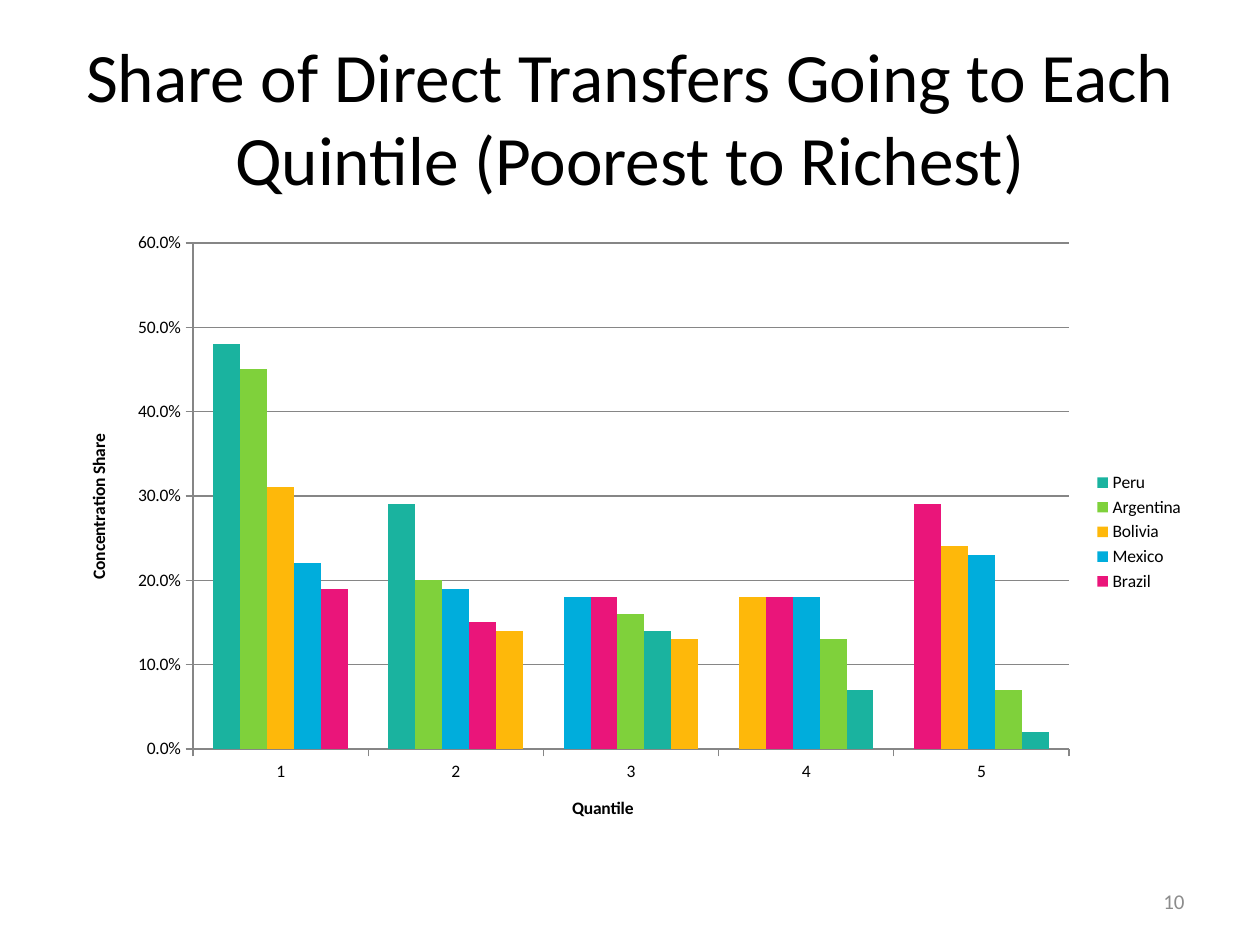
from dataclasses import dataclass

from lxml.etree import SubElement
from pptx import Presentation
from pptx.chart.data import CategoryChartData
from pptx.dml.color import RGBColor
from pptx.enum.chart import XL_CHART_TYPE, XL_LEGEND_POSITION, XL_TICK_MARK
from pptx.enum.text import MSO_ANCHOR, PP_ALIGN
from pptx.oxml.ns import qn
from pptx.util import Emu, Pt


@dataclass(frozen=True)
class Theme:
    """Hold the colours and type sizes of the slide."""
    font: str = "Calibri"
    text: str = "000000"
    muted: str = "8C8C8C"
    line: str = "868686"
    title_size: float = 39.6
    number_size: float = 12
    chart_size: float = 10


THEME = Theme()
PX_PER_INCH = 126
CHART_BOX = (63, 220, 1134, 624)
COUNTRIES = {
    "Peru": "1AB39F",
    "Argentina": "7FD13B",
    "Bolivia": "FEB80A",
    "Mexico": "00ADDC",
    "Brazil": "EA157A",
}
RANKED_SHARES = {
    "1": {"Peru": 0.48, "Argentina": 0.45, "Bolivia": 0.31, "Mexico": 0.22, "Brazil": 0.19},
    "2": {"Peru": 0.29, "Argentina": 0.2, "Mexico": 0.19, "Brazil": 0.15, "Bolivia": 0.14},
    "3": {"Mexico": 0.18, "Brazil": 0.18, "Argentina": 0.16, "Peru": 0.14, "Bolivia": 0.13},
    "4": {"Bolivia": 0.18, "Brazil": 0.18, "Mexico": 0.18, "Argentina": 0.13, "Peru": 0.07},
    "5": {"Brazil": 0.29, "Bolivia": 0.24, "Mexico": 0.23, "Argentina": 0.07, "Peru": 0.02},
}


def px(n):
    """Turn whole pixels into EMU."""
    return Emu(round(n * 914400 / PX_PER_INCH))


def style_font(font, size, color, bold=False):
    """Set face, size, colour and weight of a font."""
    font.name, font.size, font.bold = THEME.font, Pt(size), bold
    font.color.rgb = RGBColor.from_string(color)


def place(sp, box):
    """Move a shape to a box given in pixels."""
    sp.left, sp.top, sp.width, sp.height = map(px, box)


def write(sp, text, size, color, align):
    """Write one vertically centred paragraph in a shape."""
    tf = sp.text_frame
    tf.text = text
    tf.word_wrap = True
    tf.vertical_anchor = MSO_ANCHOR.MIDDLE
    p = tf.paragraphs[0]
    p.alignment = align
    style_font(p.runs[0].font, size, color)


def set_layout(parent, *lengths):
    """Fix a chart part at x, y and optional w, h in pixels of the chart."""
    layout = parent.find(qn("c:layout"))
    if layout is None:
        layout = SubElement(parent, qn("c:layout"))
        parent.insert(0 if parent.find(qn("c:tx")) is None else 1, layout)
    manual = SubElement(layout, qn("c:manualLayout"))
    if len(lengths) == 4:
        SubElement(manual, qn("c:layoutTarget")).set("val", "inner")
    for key in ("xMode", "yMode"):
        SubElement(manual, qn(f"c:{key}")).set("val", "edge")
    for key, length, whole in zip("xywh", lengths, CHART_BOX[2:] * 2):
        SubElement(manual, qn(f"c:{key}")).set("val", str(length / whole))


def style_axis(axis, title, x, y):
    """Give an axis its title, ticks and line."""
    tf = axis.axis_title.text_frame
    tf.text = title
    style_font(tf.paragraphs[0].runs[0].font, THEME.chart_size, THEME.text, True)
    set_layout(axis.axis_title.element, x, y)
    axis.major_tick_mark = XL_TICK_MARK.OUTSIDE
    axis.minor_tick_mark = XL_TICK_MARK.NONE
    axis.format.line.color.rgb = RGBColor.from_string(THEME.line)


def fill(part, color):
    """Fill a series or point with one colour."""
    part.format.fill.solid()
    part.format.fill.fore_color.rgb = RGBColor.from_string(color)


def add_ranked_chart(s):
    """Draw each quintile's bars from the largest share to the smallest."""
    ranks = list(zip(*(shares.items() for shares in RANKED_SHARES.values())))
    data = CategoryChartData(number_format="0.0%")
    data.categories = list(RANKED_SHARES)
    for name, rank in zip(COUNTRIES, ranks):
        data.add_series(name, [share for _, share in rank])
    chart = s.shapes.add_chart(
        XL_CHART_TYPE.COLUMN_CLUSTERED, *map(px, CHART_BOX), data).chart
    chart.has_title = False
    style_font(chart.font, THEME.chart_size, THEME.text)
    chart.has_legend = True
    chart.legend.position = XL_LEGEND_POSITION.RIGHT
    chart.legend.include_in_layout = False
    plot = chart.plots[0]
    plot.gap_width, plot.overlap, plot.vary_by_categories = 150, 0, False
    for series, (name, color), rank in zip(plot.series, COUNTRIES.items(), ranks):
        fill(series, color)
        for i, (country, _) in enumerate(rank):
            if country != name:
                fill(series.points[i], COUNTRIES[country])
    style_axis(chart.category_axis, "Quantile", 506, 573)
    axis = chart.value_axis
    style_axis(axis, "Concentration Share", 21, 211)
    axis.minimum_scale, axis.maximum_scale, axis.major_unit = 0, 0.6, 0.1
    axis.tick_labels.number_format = "0.0%"
    axis.tick_labels.number_format_is_linked = False
    axis.major_gridlines.format.line.color.rgb = RGBColor.from_string(THEME.line)
    set_layout(chart.element.chart.plotArea, 130, 23, 876, 506)


def main():
    """Build the slide and save it."""
    prs = Presentation()
    prs.slide_width, prs.slide_height = px(1260), px(945)
    s = prs.slides.add_slide(prs.slide_layouts[5])
    title = s.shapes.title
    place(title, (63, 37, 1134, 158))
    write(title, "Share of Direct Transfers Going to Each Quintile (Poorest to Richest)",
          THEME.title_size, THEME.text, PP_ALIGN.CENTER)
    number = s.shapes.add_textbox(*map(px, (903, 876, 294, 50)))
    write(number, "10", THEME.number_size, THEME.muted, PP_ALIGN.RIGHT)
    add_ranked_chart(s)
    prs.save("out.pptx")


if __name__ == "__main__":
    main()
